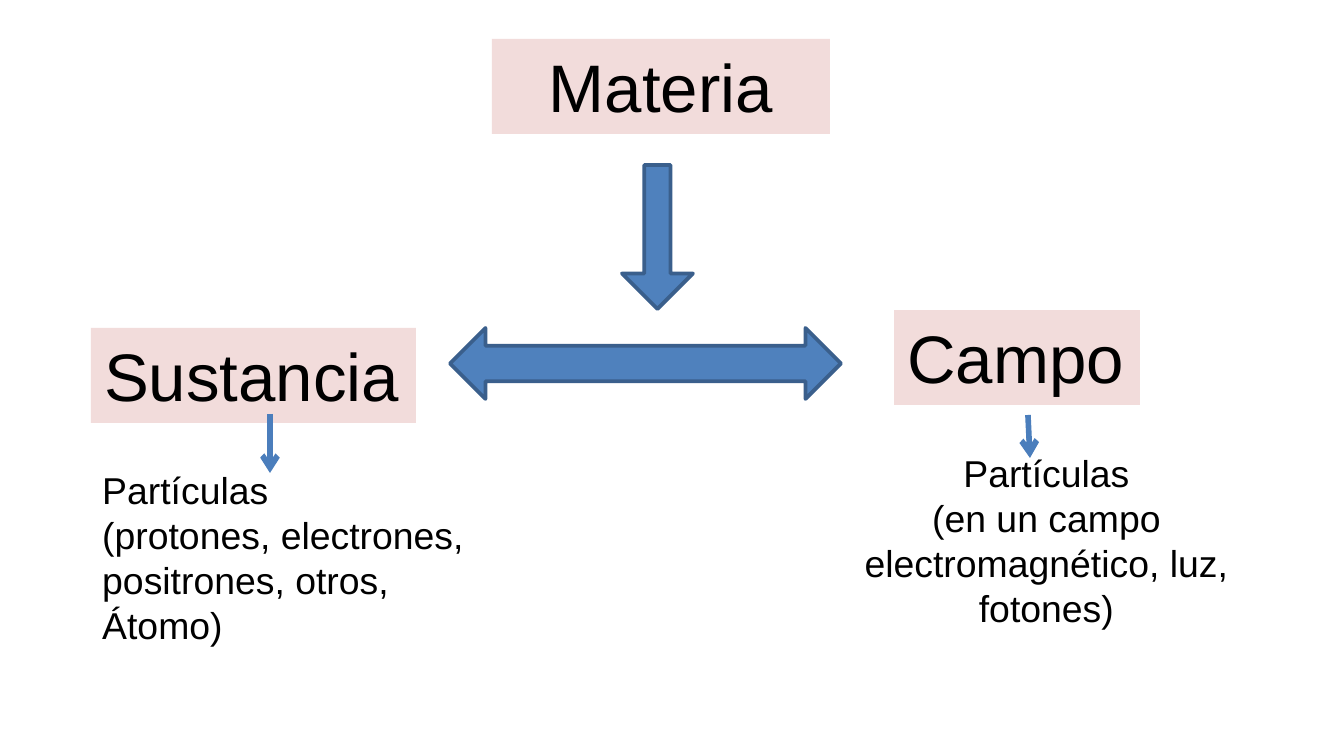
from lxml import etree
from pptx import Presentation
from pptx import util as u
from pptx.dml.color import RGBColor
from pptx.enum import shapes, text
from pptx.oxml.ns import qn

PX = 914400 / 134.4  # EMU in one px
COLORS = {"box": "F2DCDB", "arrow": "4F81BD", "edge": "3A5F8C",
          "link": "4B7EBC", "text": "000000"}
LEFT, CENTER = text.PP_ALIGN.LEFT, text.PP_ALIGN.CENTER


def px(*values):
    return [u.Emu(round(v * PX)) for v in values]


def rgb(name):
    return RGBColor.from_string(COLORS[name])


class Diagram:
    """Holds the style and the current slide."""
    font = {"name": "Arial", "bold": False}
    frame = {"auto_size": text.MSO_AUTO_SIZE.NONE,
             "vertical_anchor": text.MSO_ANCHOR.TOP}

    def __init__(self, slide):
        self.s = slide

    def label(self, sp, lines, size, align, wrap):
        tf = sp.text_frame
        tf.text = "\n".join(lines)
        for key, value in {**self.frame, "word_wrap": wrap}.items():
            setattr(tf, key, value)
        for p in tf.paragraphs:
            p.alignment = align
            for r in p.runs:
                for key, value in {**self.font, "size": u.Pt(size)}.items():
                    setattr(r.font, key, value)
                r.font.color.rgb = rgb("text")

    def fill(self, sp, color):
        sp.fill.solid()
        sp.fill.fore_color.rgb = rgb(color)

    def title(self, words, box):
        sp = self.s.shapes.title
        sp.left, sp.top, sp.width, sp.height = px(*box)
        self.fill(sp, "box")
        self.label(sp, [words], 36, CENTER, True)

    def shape(self, kind, box, color):
        sp = self.s.shapes.add_shape(kind, *px(*box))
        sp.shadow.inherit = False
        self.fill(sp, color)
        return sp

    def concept(self, words, box):
        sp = self.shape(shapes.MSO_SHAPE.RECTANGLE, box, "box")
        sp.line.fill.background()
        self.label(sp, [words], 36, LEFT, False)

    def block_arrow(self, kind, box, adjustments=()):
        sp = self.shape(kind, box, "arrow")
        sp.line.color.rgb = rgb("edge")
        sp.line.width = u.Pt(2)
        for i, value in enumerate(adjustments):
            sp.adjustments[i] = value

    def note(self, lines, box, align, wrap):
        sp = self.s.shapes.add_textbox(*px(*box))
        self.label(sp, lines, 20, align, wrap)

    def arrow(self, *ends):
        sp = self.s.shapes.add_connector(shapes.MSO_CONNECTOR.STRAIGHT, *px(*ends))
        sp.line.color.rgb = rgb("link")
        sp.line.width = u.Pt(3)
        props = sp.element.spPr
        etree.SubElement(props.find(qn("a:ln")), qn("a:tailEnd"), type="arrow")
        etree.SubElement(props, qn("a:effectLst"))


def main():
    prs = Presentation()
    prs.slide_width, prs.slide_height = px(1344, 756)
    d = Diagram(prs.slides.add_slide(prs.slide_layouts[5]))

    # Heading and block arrows
    d.title("Materia", (492, 39, 338, 95))
    d.block_arrow(shapes.MSO_SHAPE.DOWN_ARROW, (622, 165, 71, 144), (0.37, 0.5))
    d.block_arrow(shapes.MSO_SHAPE.LEFT_RIGHT_ARROW, (450, 328, 391, 71))

    # Two forms of matter
    d.concept("Sustancia", (91, 328, 325, 95))
    d.concept("Campo", (894, 310, 246, 95))

    # What each one is made of
    d.note(["Partículas", "(protones, electrones,", "positrones, otros,", "Átomo)"],
           (89, 461, 391, 285), LEFT, False)
    d.note(["Partículas", "(en un campo electromagnético, luz, fotones)"],
           (824, 444, 445, 195), CENTER, True)
    d.arrow(270, 414, 270, 473)
    d.arrow(1028, 415, 1030, 458)

    prs.save("out.pptx")


if __name__ == "__main__":
    main()
